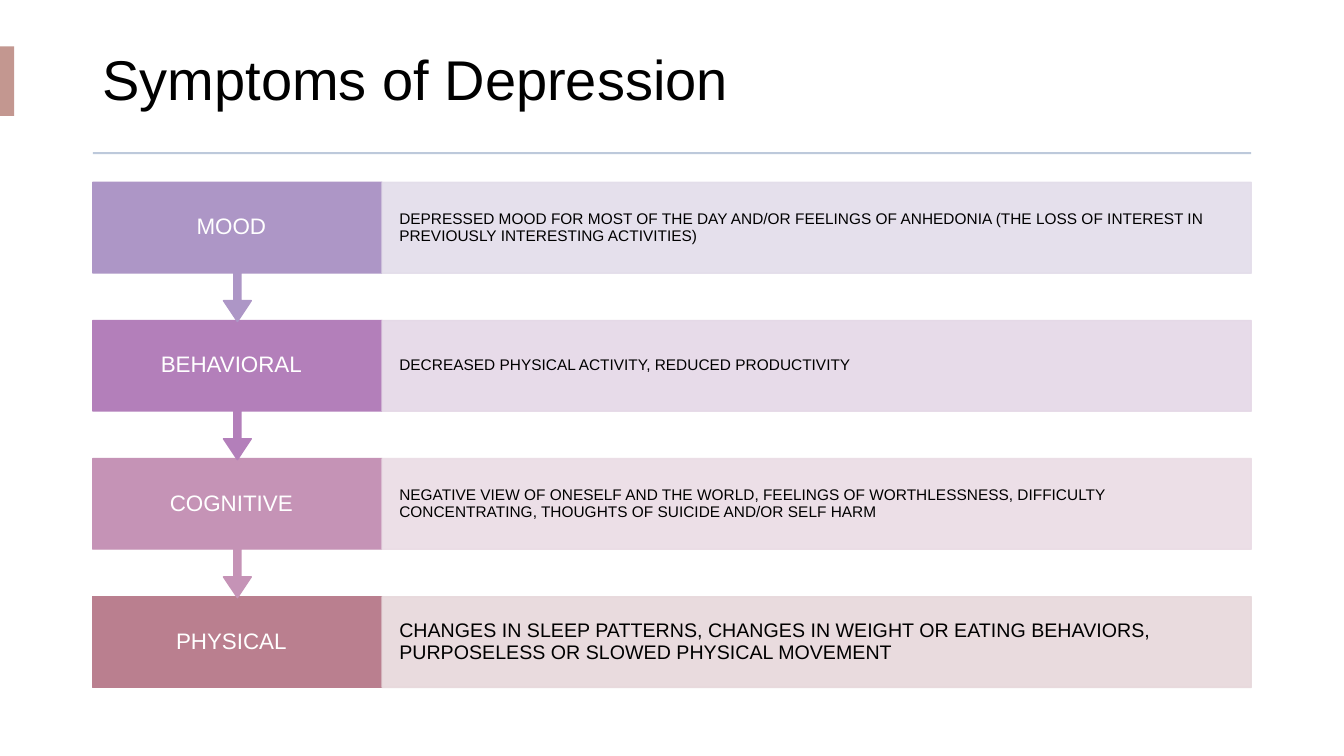
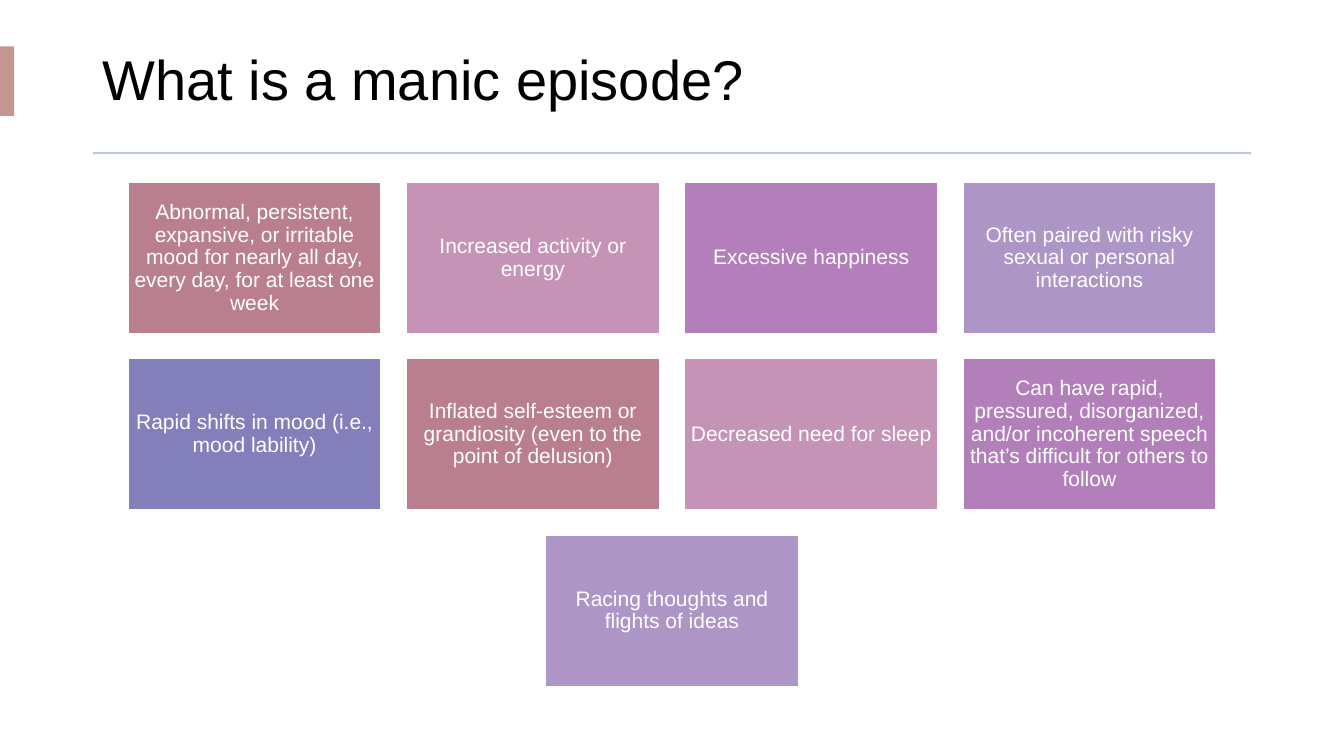
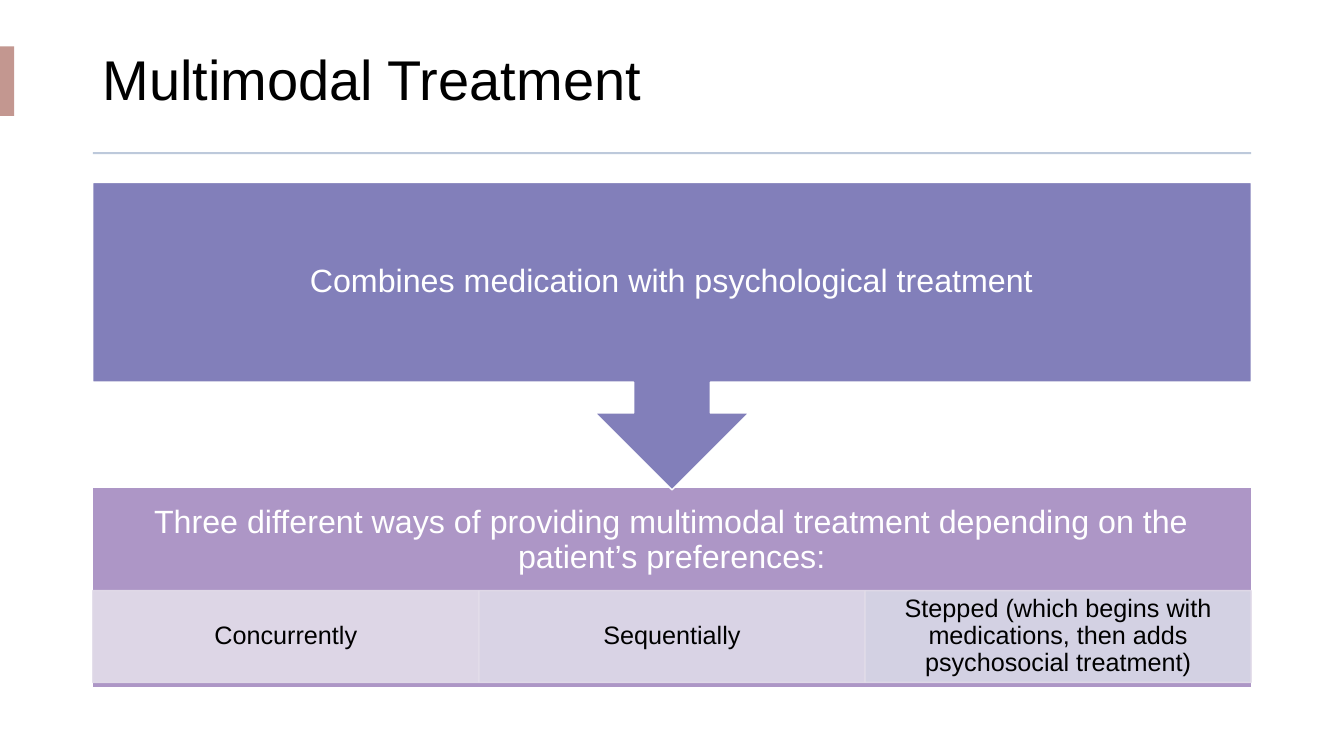
import pptx
import pptx.util
import pptx.dml.color
import pptx.enum.shapes
import pptx.enum.text
import pptx.oxml.ns
import lxml.etree

Inches = pptx.util.Inches
PRESET = pptx.enum.shapes.MSO_SHAPE
ALIGN = pptx.enum.text.PP_ALIGN
MIDDLE = pptx.enum.text.MSO_ANCHOR.MIDDLE

COLORS = {
    "white": "FFFFFF", "black": "000000", "accent": "C39790", "rule": "BDC9DB",
    "rose": "BA7F8F", "pink": "C593B6", "orchid": "B37FBA",
    "lavender": "AD96C6", "indigo": "827FBA",
    "pale rose": "E7D8DB", "pale pink": "EADCE5", "pale orchid": "E5D8E7",
    "pale lavender": "E3DDEA", "pale violet": "DEDAE9", "pale indigo": "D8D8E7",
}
FONT = "Arial"
LEFT, TOP, WIDTH = 0.92, 1.81, 11.49  # content area


def rgb(name):
    return pptx.dml.color.RGBColor.from_string(COLORS[name])


def set_values(target, values):
    for name, value in values.items():
        setattr(target, name, value)


def set_opacity(fill_format_parent, percent):
    """Add an alpha value to every solid colour below the element."""
    for color in fill_format_parent.iter(pptx.oxml.ns.qn("a:srgbClr")):
        alpha = lxml.etree.SubElement(color, pptx.oxml.ns.qn("a:alpha"))
        alpha.set("val", str(percent * 1000))


def write_text(shape, text, size, color="white", align=ALIGN.CENTER,
               insets=(0.1, 0.05, 0.1, 0.05)):
    frame = shape.text_frame
    sides = ("margin_left", "margin_top", "margin_right", "margin_bottom")
    set_values(frame, {"word_wrap": True, "vertical_anchor": MIDDLE})
    set_values(frame, {side: Inches(inset) for side, inset in zip(sides, insets)})
    paragraph = frame.paragraphs[0]
    set_values(paragraph, {"text": text, "alignment": align, "line_spacing": 0.9})
    set_values(paragraph.runs[0].font, {"name": FONT, "size": pptx.util.Pt(size)})
    paragraph.runs[0].font.color.rgb = rgb(color)


def add_block(slide, box, fill, line=None, preset=PRESET.RECTANGLE,
              adjustments=(), opacity=100):
    shape = slide.shapes.add_shape(preset, *map(Inches, box))
    shape.shadow.inherit = False
    for index, value in enumerate(adjustments):
        shape.adjustments[index] = value
    shape.fill.solid()
    shape.fill.fore_color.rgb = rgb(fill)
    if line:
        shape.line.color.rgb = rgb(line)
        shape.line.width = pptx.util.Pt(1)
    else:
        shape.line.fill.background()
    if opacity < 100:
        set_opacity(shape.fill._xPr, opacity)
    return shape


def add_titled_slide(presentation, title):
    slide = presentation.slides.add_slide(presentation.slide_layouts[6])
    title_box = slide.shapes.add_textbox(*map(Inches, (LEFT, 0.27, WIDTH, 1.1)))
    write_text(title_box, title, 40, "black", ALIGN.LEFT)
    add_block(slide, (0, 0.46, 0.14, 0.69), "accent")
    add_block(slide, (LEFT, 1.51, WIDTH, 0.02), "rule")
    return slide


def build_symptoms(presentation):
    slide = add_titled_slide(presentation, "Symptoms of Depression")
    symptoms = [
        ("MOOD", "lavender", 11,
         "DEPRESSED MOOD FOR MOST OF THE DAY AND/OR FEELINGS OF ANHEDONIA "
         "(THE LOSS OF INTEREST IN PREVIOUSLY INTERESTING ACTIVITIES)"),
        ("BEHAVIORAL", "orchid", 11,
         "DECREASED PHYSICAL ACTIVITY, REDUCED PRODUCTIVITY"),
        ("COGNITIVE", "pink", 11,
         "NEGATIVE VIEW OF ONESELF AND THE WORLD, FEELINGS OF WORTHLESSNESS, "
         "DIFFICULTY CONCENTRATING, THOUGHTS OF SUICIDE AND/OR SELF HARM"),
        ("PHYSICAL", "rose", 14,
         "CHANGES IN SLEEP PATTERNS, CHANGES IN WEIGHT OR EATING BEHAVIORS, "
         "PURPOSELESS OR SLOWED PHYSICAL MOVEMENT"),
    ]
    label_width, row_height, pitch = 2.87, 0.9, 1.37
    last = len(symptoms) - 1
    # From the bottom up, so that each arrow tip lies over the next row
    for row, (label, color, size, description) in reversed(list(enumerate(symptoms))):
        top = TOP + row * pitch
        if row == last:
            block = add_block(slide, (LEFT, top, label_width, row_height), color, color)
        else:
            block = add_block(slide, (LEFT, top, label_width, 1.38), color, color,
                              PRESET.DOWN_ARROW_CALLOUT, (0.05, 0.1, 0.15, 0.65))
        write_text(block, label, 16, insets=(0.2, 0.12, 0.32, 0.12))
        pale = "pale " + color
        band = add_block(slide, (LEFT + label_width, top, WIDTH - label_width, row_height),
                         pale, pale, opacity=90)
        write_text(band, description, size, "black", ALIGN.LEFT, (0.17, 0.15, 0.17, 0.15))


def build_manic_episode(presentation):
    slide = add_titled_slide(presentation, "What is a manic episode?")
    signs = [
        ("Abnormal, persistent, expansive, or irritable mood for nearly all day, "
         "every day, for at least one week", "rose"),
        ("Increased activity or energy", "pink"),
        ("Excessive happiness", "orchid"),
        ("Often paired with risky sexual or personal interactions", "lavender"),
        ("Rapid shifts in mood (i.e., mood lability)", "indigo"),
        ("Inflated self-esteem or grandiosity (even to the point of delusion)", "rose"),
        ("Decreased need for sleep", "pink"),
        ("Can have rapid, pressured, disorganized, and/or incoherent speech that’s "
         "difficult for others to follow", "orchid"),
        ("Racing thoughts and flights of ideas", "lavender"),
    ]
    columns, width, height, gap = 4, 2.51, 1.5, 0.25
    for start in range(0, len(signs), columns):
        row = signs[start:start + columns]
        # Each row is centred in the content area
        row_left = LEFT + (WIDTH - len(row) * (width + gap) + gap) / 2
        top = TOP + start // columns * (height + gap)
        for column, (text, color) in enumerate(row):
            box = (row_left + column * (width + gap), top, width, height)
            write_text(add_block(slide, box, color, "white"), text, 15, insets=(0.06,) * 4)


def build_treatment(presentation):
    slide = add_titled_slide(presentation, "Multimodal Treatment")
    # Lower block, with room for the options below its heading
    ways = add_block(slide, (LEFT, 4.83, WIDTH, 1.99), "lavender", "white")
    write_text(ways, "Three different ways of providing multimodal treatment "
               "depending on the patient’s preferences:", 23,
               insets=(0.18, 0.18, 0.18, 1.1))
    options = [
        ("Concurrently", "pale lavender"),
        ("Sequentially", "pale violet"),
        ("Stepped (which begins with medications, then adds psychosocial treatment)",
         "pale indigo"),
    ]
    width = WIDTH / len(options)
    for column, (text, color) in enumerate(options):
        cell = add_block(slide, (LEFT + column * width, 5.86, width, 0.91),
                         color, "pale lavender", opacity=90)
        write_text(cell, text, 18, "black", insets=(0.14, 0.03, 0.14, 0.03))
    # Upper block, pointing to the lower one
    combined = add_block(slide, (LEFT, TOP, WIDTH, 3.05), "indigo", "white",
                         PRESET.DOWN_ARROW_CALLOUT)
    write_text(combined, "Combines medication with psychological treatment", 23,
               insets=(0.18,) * 4)


def main():
    presentation = pptx.Presentation()
    set_values(presentation, {"slide_width": Inches(13.33), "slide_height": Inches(7.5)})
    build_symptoms(presentation)
    build_manic_episode(presentation)
    build_treatment(presentation)
    presentation.save("out.pptx")


if __name__ == "__main__":
    main()
